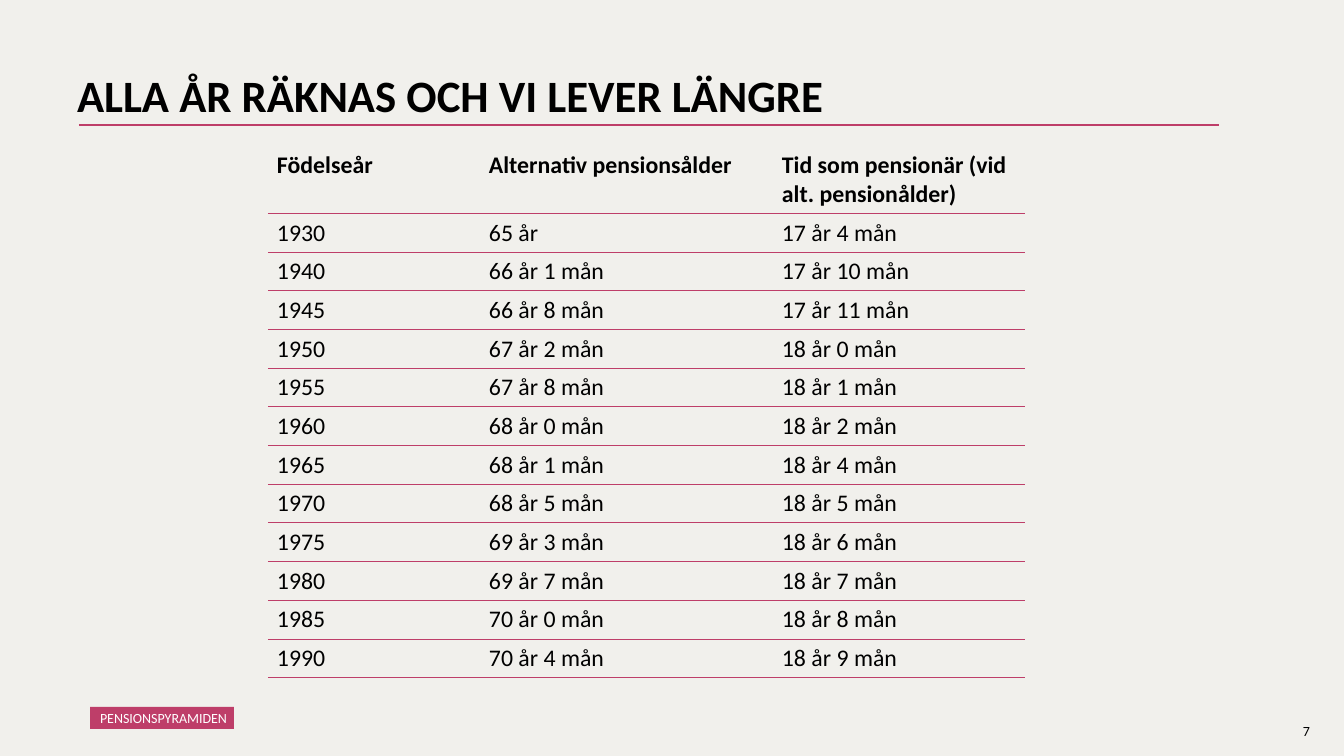
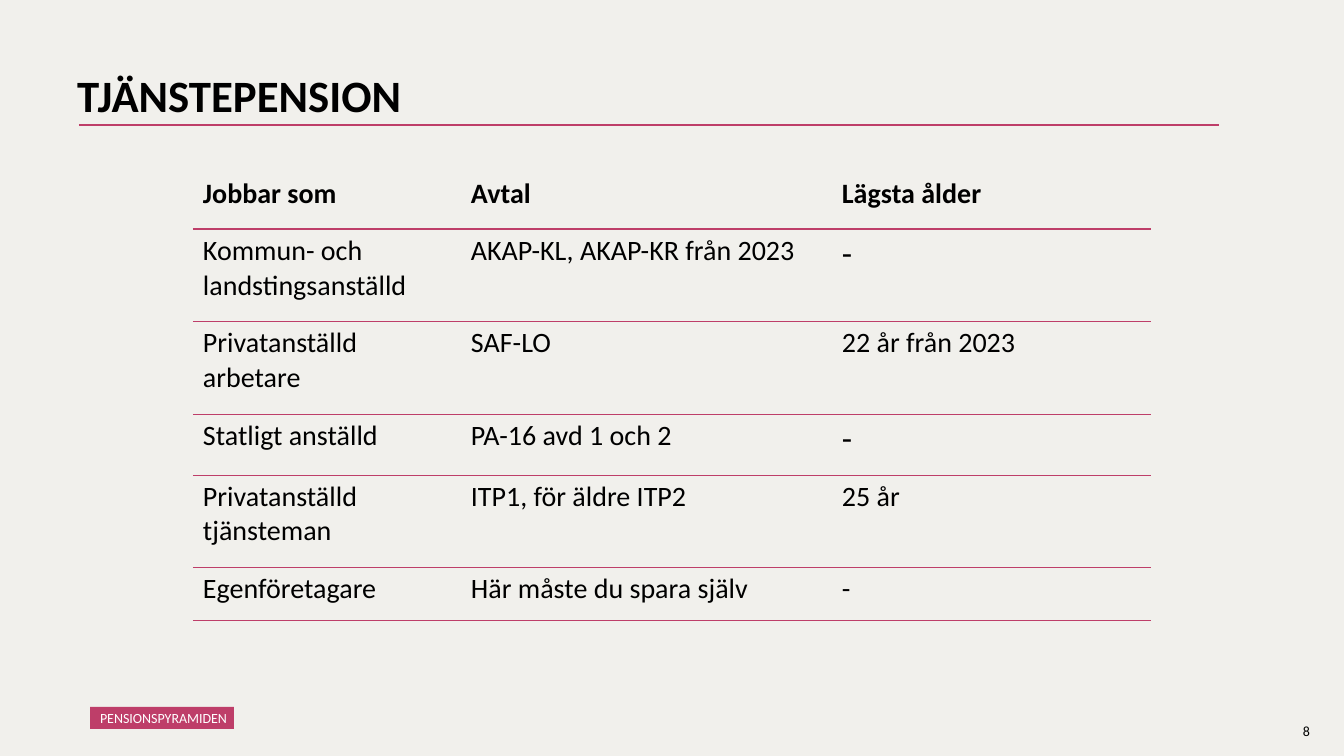
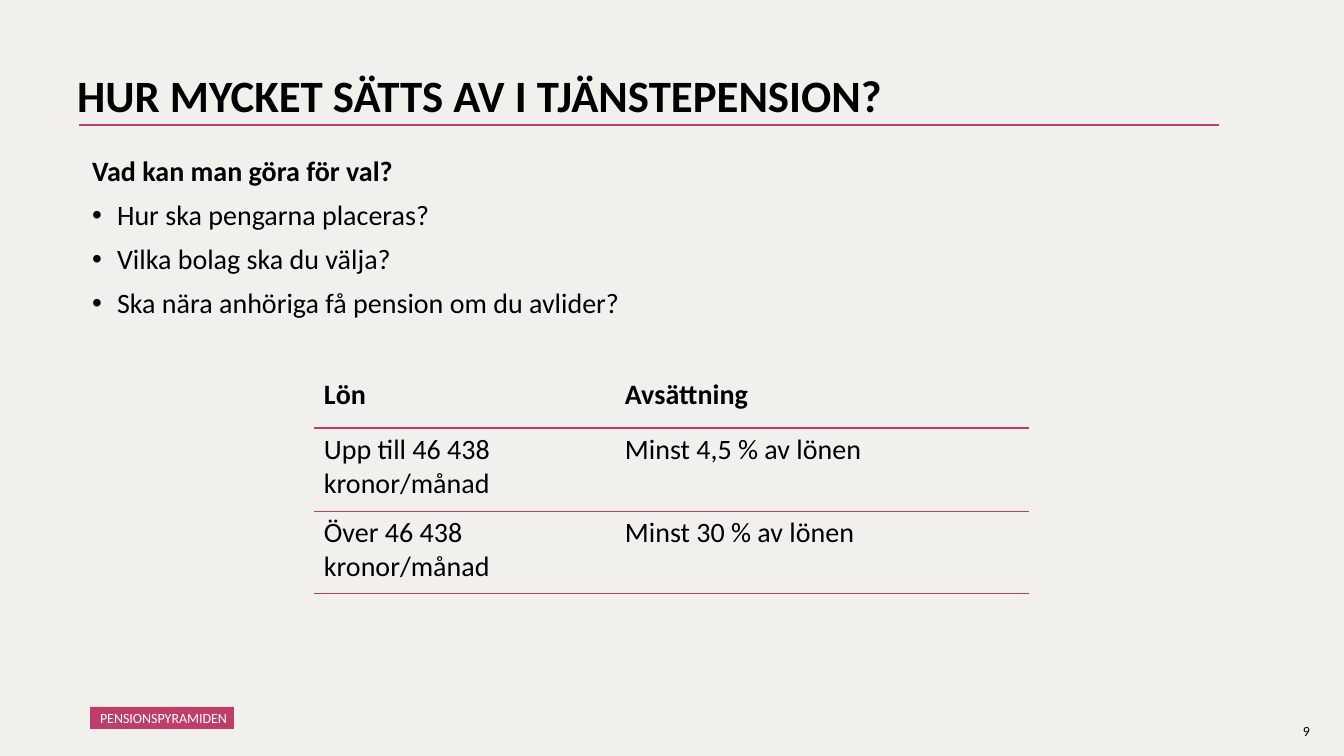
from lxml import etree
from pptx import Presentation, util as u
from pptx.dml.color import RGBColor
from pptx.enum import shapes, text
from pptx.oxml.ns import qn

FONT = "Calibri"
INK, ACCENT, PAPER, WHITE = "000000", "BE3E69", "F1F0EC", "FFFFFF"
PLAIN_TABLE = "{2D5ABB26-0587-4C30-8999-92F81FD0307C}"
TITLE_ONLY, TITLE_AND_BODY = 5, 1

LIFESPANS = [
    ("Födelseår", "Alternativ pensionsålder", "Tid som pensionär (vid alt. pensionålder)"),
    ("1930", "65 år", "17 år 4 mån"),
    ("1940", "66 år 1 mån", "17 år 10 mån"),
    ("1945", "66 år 8 mån", "17 år 11 mån"),
    ("1950", "67 år 2 mån", "18 år 0 mån"),
    ("1955", "67 år 8 mån", "18 år 1 mån"),
    ("1960", "68 år 0 mån", "18 år 2 mån"),
    ("1965", "68 år 1 mån", "18 år 4 mån"),
    ("1970", "68 år 5 mån", "18 år 5 mån"),
    ("1975", "69 år 3 mån", "18 år 6 mån"),
    ("1980", "69 år 7 mån", "18 år 7 mån"),
    ("1985", "70 år 0 mån", "18 år 8 mån"),
    ("1990", "70 år 4 mån", "18 år 9 mån"),
]
BIG_DASH = ("-", 24)
AGREEMENTS = [
    ("Jobbar som", "Avtal", "Lägsta ålder"),
    ("Kommun- och landstingsanställd", "AKAP-KL, AKAP-KR från 2023", BIG_DASH),
    ("Privatanställd arbetare", "SAF-LO", "22 år från 2023"),
    ("Statligt anställd", "PA-16 avd 1 och 2", BIG_DASH),
    ("Privatanställd tjänsteman", "ITP1, för äldre ITP2", "25 år"),
    ("Egenföretagare", "Här måste du spara själv", "-"),
]
CONTRIBUTIONS = [
    ("Lön", "Avsättning"),
    ("Upp till 46 438 kronor/månad", "Minst 4,5 % av lönen"),
    ("Över 46 438 kronor/månad", "Minst 30 % av lönen"),
]
CHOICES = [
    "Hur ska pengarna placeras?",
    "Vilka bolag ska du välja?",
    "Ska nära anhöriga få pension om du avlider?",
]


def px(length):
    return u.Inches(length / 100.8)


def color(hex_string):
    return RGBColor.from_string(hex_string)


def add_run(paragraph, words, size, ink=INK, bold=False):
    run = paragraph.add_run()
    run.text = words
    run.font.name, run.font.size, run.font.bold = FONT, u.Pt(size), bold
    run.font.color.rgb = color(ink)


def place(shape, box):
    shape.left, shape.top, shape.width, shape.height = map(px, box)


def add_title(slide, box, words):
    title = slide.shapes.title
    place(title, box)
    frame = title.text_frame
    frame.auto_size = text.MSO_AUTO_SIZE.NONE
    frame.vertical_anchor = text.MSO_ANCHOR.TOP
    line = frame.paragraphs[0]
    line.alignment, line.line_spacing = text.PP_ALIGN.LEFT, 0.9
    add_run(line, words, 32, bold=True)


def add_rule(slide, left, right, y):
    rule = slide.shapes.add_connector(
        shapes.MSO_CONNECTOR.STRAIGHT, px(left), px(y), px(right), px(y))
    rule.line.color.rgb = color(ACCENT)
    rule.line.width = u.Pt(1.5)
    etree.SubElement(rule._element.spPr, qn("a:effectLst"))


def add_tag(slide, box, words):
    tag = slide.shapes.add_shape(shapes.MSO_SHAPE.RECTANGLE, *map(px, box))
    tag.shadow.inherit = False
    tag.fill.solid()
    tag.fill.fore_color.rgb = color(ACCENT)
    tag.line.fill.background()
    frame = tag.text_frame
    frame.margin_left, frame.margin_top = px(10), px(8)
    frame.margin_right, frame.margin_bottom = px(4), px(5)
    frame.vertical_anchor = text.MSO_ANCHOR.MIDDLE
    line = frame.paragraphs[0]
    line.alignment, line.line_spacing = text.PP_ALIGN.LEFT, 0.9
    add_run(line, words, 10, WHITE)


def add_page_number(slide, box, number):
    frame = slide.shapes.add_textbox(*map(px, box)).text_frame
    frame.word_wrap = True
    add_run(frame.paragraphs[0], str(number), 10)


def add_page(prs, layout, number, title):
    """Add a slide with everything that all slides share."""
    slide = prs.slides.add_slide(prs.slide_layouts[layout])
    add_title(slide, (67, 69, 1159, 146), title)
    add_rule(slide, 79, 1219, 125)
    add_tag(slide, (90, 707, 144, 22), "PENSIONSPYRAMIDEN")
    add_page_number(slide, (1293, 718, 40, 27), number)
    return slide


def underline(cell, points):
    border = etree.Element(qn("a:lnB"), w=str(u.Pt(points)))
    fill = etree.SubElement(border, qn("a:solidFill"))
    etree.SubElement(fill, qn("a:srgbClr"), val=ACCENT)
    cell._tc.get_or_add_tcPr().insert(0, border)


def add_ruled_table(slide, corner, widths, heights, rows, size, inset=10):
    """Entries are words, or (words, size) where the size differs."""
    left, top = corner
    table = slide.shapes.add_table(
        len(rows), len(widths), px(left), px(top), px(sum(widths)), px(sum(heights))).table
    table.first_row = table.horz_banding = False
    table._tbl.tblPr.find(qn("a:tableStyleId")).text = PLAIN_TABLE
    for column, width in zip(table.columns, widths):
        column.width = px(width)
    for r, (entries, height) in enumerate(zip(rows, heights)):
        table.rows[r].height = px(height)
        for c, entry in enumerate(entries):
            words, points = entry if isinstance(entry, tuple) else (entry, size)
            cell = table.cell(r, c)
            cell.margin_left = cell.margin_right = px(inset)
            cell.fill.background()
            underline(cell, 0.5 if r else 1)
            add_run(cell.text_frame.paragraphs[0], words, points, bold=r == 0)


def add_choices(slide, box, heading, choices):
    body = slide.placeholders[1]
    place(body, box)
    frame = body.text_frame
    frame.auto_size = text.MSO_AUTO_SIZE.NONE
    frame.vertical_anchor = text.MSO_ANCHOR.TOP
    for i, words in enumerate([heading, *choices]):
        line = frame.add_paragraph() if i else frame.paragraphs[0]
        line.line_spacing, line.space_before = 0.9, u.Pt(10 if i else 0)
        props = line._p.get_or_add_pPr()
        indent = px(25) if i else 0
        props.set("marL", str(indent))
        props.set("indent", str(-indent))
        if i:
            etree.SubElement(props, qn("a:buFont"), typeface="Arial")
            etree.SubElement(props, qn("a:buChar"), char="•")
        else:
            etree.SubElement(props, qn("a:buNone"))
        add_run(line, words, 20, bold=i == 0)


def main():
    prs = Presentation()
    prs.slide_width, prs.slide_height = px(1344), px(756)
    backdrop = prs.slide_master.background.fill
    backdrop.solid()
    backdrop.fore_color.rgb = color(PAPER)

    lifespans = add_page(prs, TITLE_ONLY, 7, "ALLA ÅR RÄKNAS OCH VI LEVER LÄNGRE")
    add_ruled_table(lifespans, (268, 146), (212, 293, 252), [67] + [38] * 12,
                    LIFESPANS, 17, inset=9)

    agreements = add_page(prs, TITLE_ONLY, 8, "TJÄNSTEPENSION")
    add_ruled_table(agreements, (193, 172), (268, 371, 319), (57, 92, 93, 61, 92, 53),
                    AGREEMENTS, 20)

    contributions = add_page(prs, TITLE_AND_BODY, 9, "HUR MYCKET SÄTTS AV I TJÄNSTEPENSION?")
    add_choices(contributions, (82, 152, 852, 182), "Vad kan man göra för val?", CHOICES)
    add_ruled_table(contributions, (314, 373), (301, 414), (55, 83, 82), CONTRIBUTIONS, 20)

    prs.save("out.pptx")


if __name__ == "__main__":
    main()
